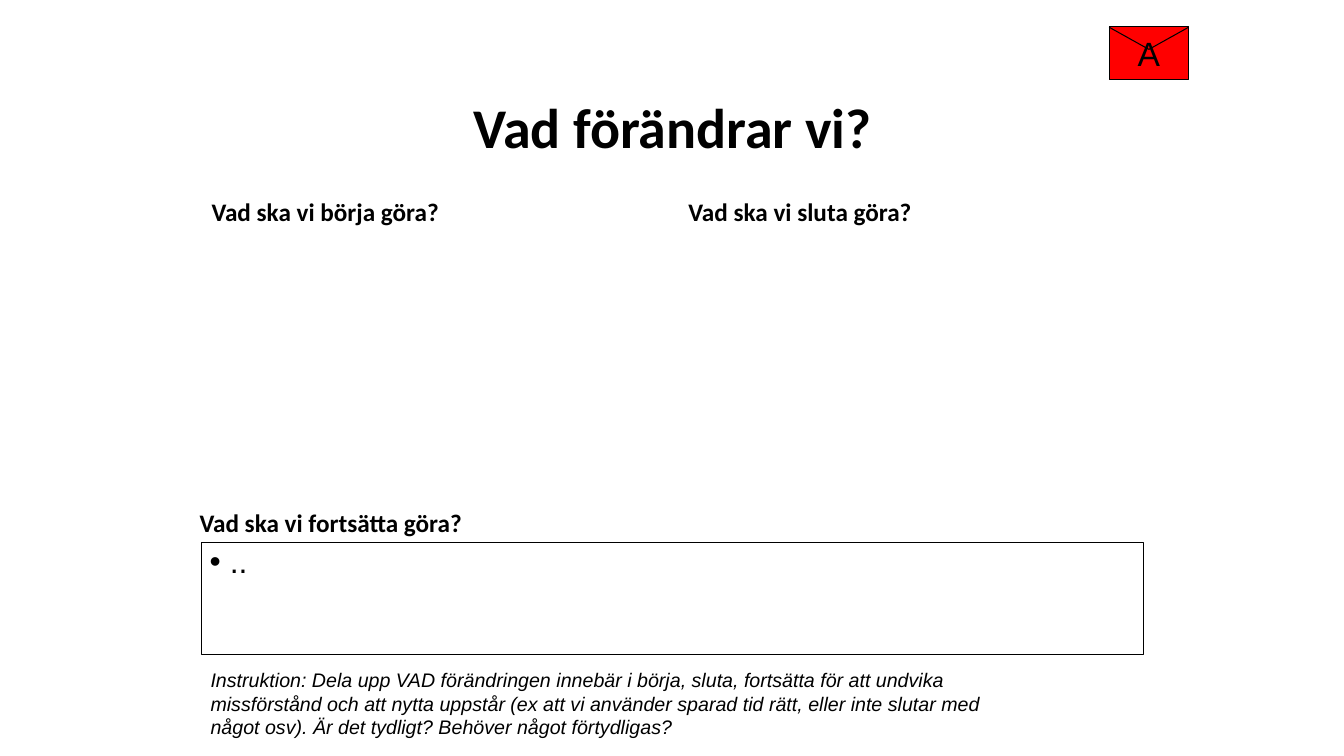
from lxml.etree import SubElement
from pptx import Presentation
from pptx.dml.color import RGBColor
from pptx.enum.shapes import MSO_CONNECTOR, MSO_SHAPE
from pptx.enum.text import MSO_ANCHOR, PP_ALIGN
from pptx.oxml.ns import qn
from pptx.util import Inches, Pt

BLACK = RGBColor(0, 0, 0)
RED = RGBColor(255, 0, 0)


def write(shape, text, size, font="Arial", bold=False, italic=False,
          anchor=MSO_ANCHOR.TOP, align=PP_ALIGN.LEFT, spacing=1.0, inset=0.1):
    frame = shape.text_frame
    frame.word_wrap = True
    frame.vertical_anchor = anchor
    frame.margin_left = frame.margin_right = Inches(inset)
    frame.margin_top = frame.margin_bottom = Inches(inset / 2)
    para = frame.paragraphs[0]
    para.alignment = align
    para.line_spacing = spacing
    run = para.add_run()
    run.text = text
    run.font.name = font
    run.font.size = Pt(size)
    run.font.bold = bold
    run.font.italic = italic
    run.font.color.rgb = BLACK
    return para


def add_text(slide, box, text, size, **style):
    shape = slide.shapes.add_textbox(*map(Inches, box))
    write(shape, text, size, **style)


def add_heading(slide, box, text, inset=0.1):
    add_text(slide, box, text, 18, font="Calibri", bold=True,
             anchor=MSO_ANCHOR.BOTTOM, spacing=0.9, inset=inset)


def add_rect(shapes, box, fill=None):
    rect = shapes.add_shape(MSO_SHAPE.RECTANGLE, *map(Inches, box))
    rect.shadow.inherit = False
    if fill is None:
        rect.fill.background()
    else:
        rect.fill.solid()
        rect.fill.fore_color.rgb = fill
    rect.line.color.rgb = BLACK
    rect.line.width = Pt(0.75)
    return rect


def add_line(shapes, start, end):
    line = shapes.add_connector(MSO_CONNECTOR.STRAIGHT,
                                *map(Inches, (*start, *end)))
    line.line.color.rgb = BLACK
    line.line.width = Pt(0.75)
    SubElement(line._element.spPr, qn("a:effectLst"))


def add_bullet(para, indent):
    props = para._p.get_or_add_pPr()
    props.set("marL", str(Inches(indent)))
    props.set("indent", str(-Inches(indent)))
    SubElement(props, qn("a:buFont"), typeface="Arial")
    SubElement(props, qn("a:buChar"), char="•")


def add_envelope(slide, left, top, width, height, letter):
    """Group a lettered rectangle with the two folds of its flap."""
    shapes = slide.shapes.add_group_shape().shapes
    body = add_rect(shapes, (left, top, width, height), RED)
    write(body, letter, 24, anchor=MSO_ANCHOR.MIDDLE, align=PP_ALIGN.CENTER)
    tip = (left + width / 2, top + 0.23)
    for side in (left, left + width):
        add_line(shapes, (side, top + 0.01), tip)


def main():
    deck = Presentation()
    deck.slide_width = Inches(13.33)
    deck.slide_height = Inches(7.5)
    slide = deck.slides.add_slide(deck.slide_layouts[6])

    add_text(slide, (2, 1.03, 9.34, 0.52), "Vad förändrar vi?", 40,
             font="Calibri", bold=True, anchor=MSO_ANCHOR.MIDDLE,
             align=PP_ALIGN.CENTER, spacing=0.9)
    add_heading(slide, (2, 1.57, 4.58, 0.73), "Vad ska vi börja göra?")
    add_heading(slide, (6.73, 1.57, 4.61, 0.73), "Vad ska vi sluta göra?")
    add_heading(slide, (1.9, 4.65, 4.61, 0.73),
                "Vad ska vi fortsätta göra?", inset=0.08)

    answer = add_rect(slide.shapes, (2, 5.38, 9.34, 1.11))
    para = write(answer, "..", 22.8, spacing=0.9, inset=0.08)
    add_bullet(para, 0.2)

    add_text(slide, (1.99, 6.58, 8.37, 0.81),
             "Instruktion: Dela upp VAD förändringen innebär i börja, sluta, "
             "fortsätta för att undvika missförstånd och att nytta uppstår "
             "(ex att vi använder sparad tid rätt, eller inte slutar med "
             "något osv). Är det tydligt? Behöver något förtydligas?",
             14, italic=True)
    add_envelope(slide, 11, 0.26, 0.79, 0.53, "A")
    deck.save("out.pptx")


if __name__ == "__main__":
    main()
